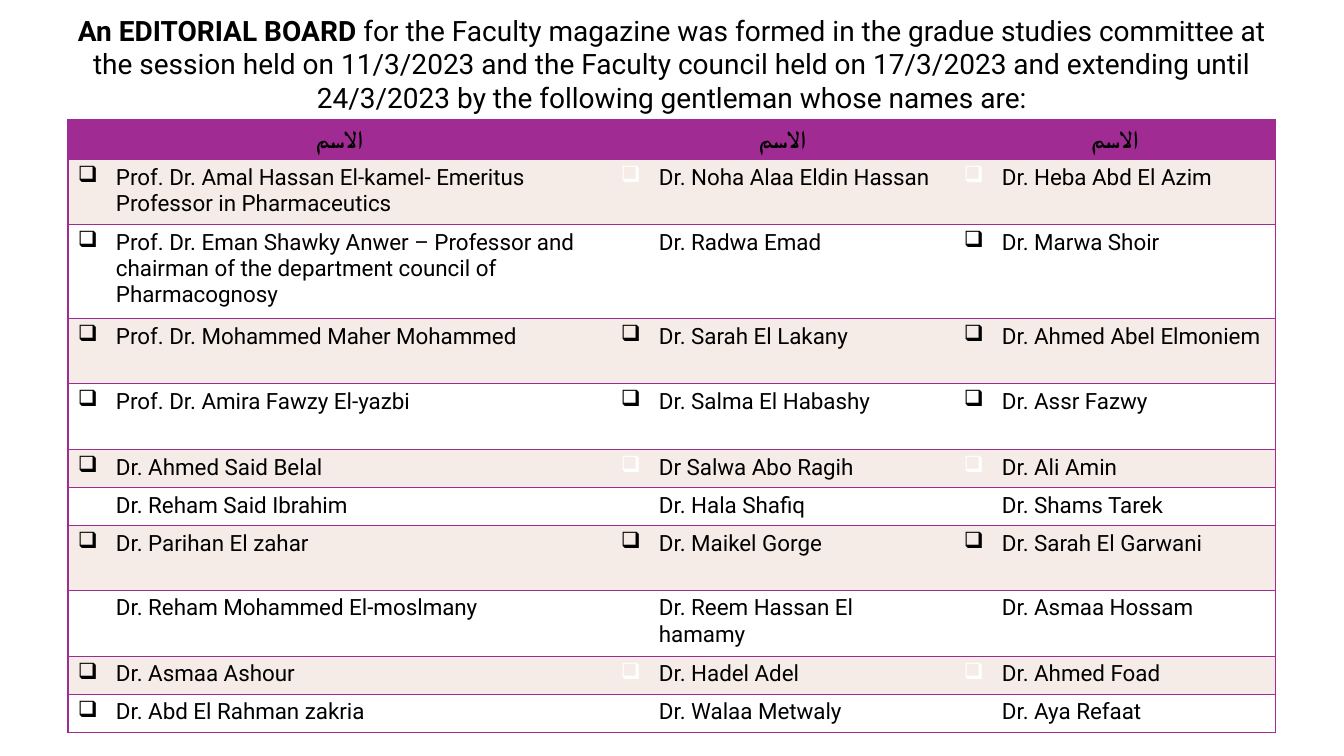
from lxml import etree
from pptx import Presentation, util as u
from pptx.dml.color import RGBColor
from pptx.enum import text
from pptx.oxml import ns

SCALE = 914400 / 100.8  # EMU in one px
PURPLE, CREAM, WHITE, BLACK = "A02B93", "F6ECE7", "FFFFFF", "000000"

TITLE = [
    ("An EDITORIAL BOARD ", True),
    ("for the Faculty magazine was formed in the gradue studies committee at "
     "the session held on 11/3/2023 and the Faculty council held on 17/3/2023 "
     "and extending until 24/3/2023 by the following gentleman whose names are:", False),
]

# Row height, names, and one mark per name: x = black bullet, o = white bullet
MEMBERS = [
    (65, "xoo", ["Prof. Dr. Amal Hassan El-kamel- Emeritus Professor in Pharmaceutics",
                 "Dr. Noha Alaa Eldin Hassan", "Dr. Heba Abd El Azim"]),
    (94, "xox", ["Prof. Dr. Eman Shawky Anwer – Professor and chairman of the "
                 "department council of Pharmacognosy",
                 "Dr. Radwa Emad", "Dr. Marwa Shoir"]),
    (65, "xxx", ["Prof. Dr. Mohammed Maher Mohammed", "Dr. Sarah El Lakany",
                 "Dr. Ahmed Abel Elmoniem"]),
    (66, "xxx", ["Prof. Dr. Amira Fawzy El-yazbi", "Dr. Salma El Habashy",
                 "Dr. Assr Fazwy"]),
    (38, "xoo", ["Dr. Ahmed Said Belal", "Dr Salwa Abo Ragih", "Dr. Ali Amin"]),
    (38, "ooo", ["Dr. Reham Said Ibrahim", "Dr. Hala Shafiq", "Dr. Shams Tarek"]),
    (65, "xxx", ["Dr. Parihan El zahar", "Dr. Maikel Gorge", "Dr. Sarah El Garwani"]),
    (66, "ooo", ["Dr. Reham Mohammed El-moslmany", "Dr. Reem Hassan El hamamy",
                 "Dr. Asmaa Hossam"]),
    (38, "xoo", ["Dr. Asmaa Ashour", "Dr. Hadel Adel", "Dr. Ahmed Foad"]),
    (38, "xoo", ["Dr. Abd El Rahman zakria", "Dr. Walaa Metwaly", "Dr. Aya Refaat"]),
]
COLUMNS = [543, 343, 322]
HEADER = "الاسم"


def px(length):
    return u.Emu(round(length * SCALE))


def colour(value):
    return RGBColor.from_string(value)


def add_xml(parent, tag, **attributes):
    return etree.SubElement(parent, ns.qn(tag), attributes)


def apply(target, values):
    for name, value in values.items():
        setattr(target, name, value)


class Slide:
    font = "Roboto"
    indent = 38

    def __init__(self, deck):
        self.page = deck.slides.add_slide(deck.slide_layouts[5])

    def add_span(self, para, words, size, bold=False):
        span = para.add_run()
        span.text = words
        apply(span.font, {"name": self.font, "size": u.Pt(size), "bold": bold})
        span.font.color.rgb = colour(BLACK)
        add_xml(span.font._element, "a:cs", typeface=self.font)

    def title(self, left, top, width, height, spans, size):
        box = self.page.shapes.title
        apply(box, {"left": px(left), "top": px(top),
                    "width": px(width), "height": px(height)})
        apply(box.text_frame, {
            "margin_left": 0, "margin_right": 0, "margin_top": 0, "margin_bottom": 0,
            "word_wrap": True, "auto_size": text.MSO_AUTO_SIZE.NONE,
            "vertical_anchor": text.MSO_ANCHOR.MIDDLE})
        para = box.text_frame.paragraphs[0]
        para.alignment = text.PP_ALIGN.CENTER
        for words, bold in spans:
            self.add_span(para, words, size, bold)

    def table(self, left, top, columns, heights):
        frame = self.page.shapes.add_table(len(heights), len(columns), px(left), px(top),
                                           px(sum(columns)), px(sum(heights)))
        table = frame.table
        apply(table, {"first_row": False, "horz_banding": False})
        for column, width in zip(table.columns, columns):
            column.width = px(width)
        for row, height in zip(table.rows, heights):
            row.height = px(height)
        return table

    def cell(self, cell, fill, sides):
        cell.fill.solid()
        cell.fill.fore_color.rgb = colour(fill)
        apply(cell, {"margin_left": px(10), "margin_right": px(10),
                     "margin_top": px(5), "margin_bottom": px(5)})
        properties = cell._tc.get_or_add_tcPr()
        # Borders come before the fill, in the order left, right, top, bottom
        for position, side in enumerate("LRTB"):
            line = add_xml(properties, f"a:ln{side}", w=str(u.Pt(1)))
            if side in sides:
                solid = add_xml(line, "a:solidFill")
                add_xml(solid, "a:srgbClr", val=PURPLE)
            else:
                add_xml(line, "a:noFill")
            properties.insert(position, line)
        return cell.text_frame.paragraphs[0]

    def bullet(self, para, mark):
        properties = para._p.get_or_add_pPr()
        properties.set("marL", str(px(self.indent)))
        properties.set("indent", str(px(-self.indent)))
        if mark == "o":
            add_xml(add_xml(properties, "a:buClr"), "a:srgbClr", val=WHITE)
        add_xml(properties, "a:buChar", char="❑")


def main():
    deck = Presentation()
    apply(deck, {"slide_width": px(1344), "slide_height": px(756)})
    slide = Slide(deck)

    # Heading
    slide.title(58, -36, 1228, 199, TITLE, 20)

    # Board members
    table = slide.table(68, 120, COLUMNS, [38] + [height for height, _, _ in MEMBERS])
    sides = ["LTB", "TB", "RTB"]
    for column, edge in enumerate(sides):
        para = slide.cell(table.cell(0, column), PURPLE, edge)
        para.alignment = text.PP_ALIGN.CENTER
        slide.add_span(para, HEADER, 18, True)
    for row, (_, marks, names) in enumerate(MEMBERS, 1):
        fill = CREAM if row % 2 else WHITE
        for column, (name, mark) in enumerate(zip(names, marks)):
            para = slide.cell(table.cell(row, column), fill, sides[column])
            slide.bullet(para, mark)
            slide.add_span(para, name, 16)

    deck.save("out.pptx")


if __name__ == "__main__":
    main()
